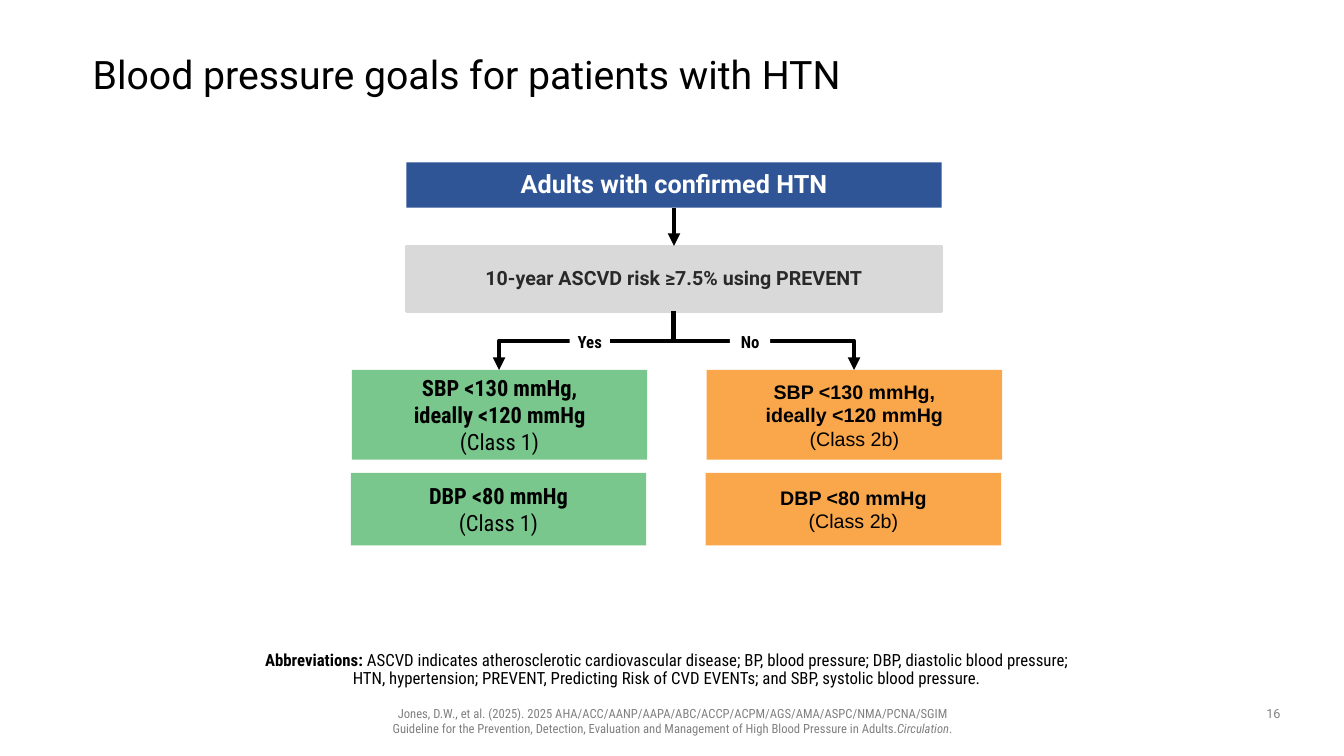
from dataclasses import dataclass

from lxml.etree import SubElement
from pptx import Presentation
from pptx.dml.color import RGBColor
from pptx.enum.shapes import MSO_CONNECTOR as Connector, MSO_SHAPE as Shape
from pptx.enum.text import MSO_ANCHOR as Anchor, PP_ALIGN as Align
from pptx.oxml.ns import qn
from pptx.util import Inches, Pt


@dataclass(frozen=True)
class Theme:
    black: str = "000000"
    white: str = "FFFFFF"
    blue: str = "2F5597"
    grey: str = "D9D9D9"
    charcoal: str = "292929"
    muted: str = "808080"
    green: str = "79C78D"
    orange: str = "FAA74B"
    sans: str = "Roboto"
    condensed: str = "Roboto Condensed"
    plain: str = "Arial"
    title: int = 28
    heading: int = 18
    goal: int = 16
    body: int = 14
    label: int = 12
    small: int = 9


class FlowSlide:
    """Holds the theme and the current slide, and draws its elements."""

    def __init__(self, presentation, theme):
        self.theme = theme
        self.slide = presentation.slides.add_slide(presentation.slide_layouts[6])

    def set_text(self, shape, paragraphs, font, size, color, bold=False, align=Align.CENTER,
                 anchor=Anchor.MIDDLE, spacing=None, insets=(0, 0, 0, 0)):
        """Each paragraph is a list of (text, font overrides); a newline is a line break."""
        frame = shape.text_frame
        left, top, right, bottom = map(Inches, insets)
        frame_format = {"word_wrap": True, "vertical_anchor": anchor, "margin_left": left,
                        "margin_top": top, "margin_right": right, "margin_bottom": bottom}
        for name, value in frame_format.items():
            setattr(frame, name, value)
        for index, runs in enumerate(paragraphs):
            paragraph = frame.add_paragraph() if index else frame.paragraphs[0]
            paragraph.alignment = align
            paragraph.line_spacing = spacing
            for text, overrides in runs:
                for number, line in enumerate(text.split("\n")):
                    if number:
                        paragraph.add_line_break()
                    run = paragraph.add_run()
                    run.text = line
                    font_format = {"name": font, "size": Pt(size), "bold": bold, **overrides}
                    for name, value in font_format.items():
                        setattr(run.font, name, value)
                    run.font.color.rgb = RGBColor.from_string(color)

    def text(self, bounds, paragraphs, **style):
        shape = self.slide.shapes.add_textbox(*map(Inches, bounds))
        self.set_text(shape, paragraphs, **style)

    def box(self, bounds, fill, paragraphs, outline=None, **style):
        shape = self.slide.shapes.add_shape(Shape.RECTANGLE, *map(Inches, bounds))
        shape.shadow.inherit = False
        shape.fill.solid()
        shape.fill.fore_color.rgb = RGBColor.from_string(fill)
        if outline:
            shape.line.color.rgb = RGBColor.from_string(outline)
            shape.line.width = Pt(2)
        else:
            shape.line.fill.background()
        self.set_text(shape, paragraphs, **style)
        return shape

    def arrow(self, kind, start, end):
        connector = self.slide.shapes.add_connector(kind, *map(Inches, (*start, *end)))
        connector.line.color.rgb = RGBColor.from_string(self.theme.black)
        connector.line.width = Pt(3)
        properties = connector._element.spPr
        SubElement(properties.find(qn("a:ln")), qn("a:tailEnd"), type="triangle")
        SubElement(properties, qn("a:effectLst"))
        return connector

    def branch(self, start, end):
        """Elbow arrow that leaves downwards: a sideways elbow turned a quarter."""
        middle_x, middle_y = (start[0] + end[0]) / 2, (start[1] + end[1]) / 2
        half_width, half_height = (end[1] - start[1]) / 2, abs(end[0] - start[0]) / 2
        goes_right = end[0] > start[0]
        reach = -half_width if goes_right else half_width
        connector = self.arrow(Connector.ELBOW, (middle_x - reach, middle_y - half_height),
                               (middle_x + reach, middle_y + half_height))
        turn = 270 if goes_right else 90
        connector._element.spPr.find(qn("a:xfrm")).set("rot", str(turn * 60000))


def main():
    presentation = Presentation()
    presentation.slide_width, presentation.slide_height = Inches(13.33), Inches(7.5)
    theme = Theme()
    page = FlowSlide(presentation, theme)
    default_insets = (0.1, 0.05, 0.1, 0.05)
    regular = {"bold": False}

    # Title
    page.text((0.92, 0.4, 11.5, 0.72), [[("Blood pressure goals for patients with HTN", {})]],
              font=theme.sans, size=theme.title, color=theme.black, align=Align.LEFT, spacing=0.9)

    # Population and risk question
    step = {"font": theme.sans, "bold": True, "spacing": 0.9}
    population = page.box((4.03, 1.61, 5.31, 0.45), theme.blue,
                          [[("Adults with confirmed HTN", {})]],
                          size=theme.heading, color=theme.white, **step)
    question = page.box((4.03, 2.44, 5.31, 0.65), theme.grey,
                        [[("10-year ASCVD risk ≥7.5% using PREVENT", {})]],
                        outline=theme.grey, size=theme.body, color=theme.charcoal, **step)

    # Blood pressure goals, one column per answer
    columns = [(3.48, theme.green, "Class 1", theme.condensed, theme.goal),
               (7.0, theme.orange, "Class 2b", theme.plain, theme.body)]
    goals = [(0.01, 3.67, 0.89, "SBP <130 mmHg,\nideally <120 mmHg"),
             (0, 4.69, 0.72, "DBP <80 mmHg")]
    for left, fill, grade, font, size in columns:
        for shift, top, height, goal in goals:
            page.box((left + shift, top, 2.93, height), fill,
                     [[(goal, {})], [(f"({grade})", regular)]],
                     font=font, size=size, color=theme.black, bold=True, insets=default_insets)

    # Arrows
    arrow = page.arrow(Connector.STRAIGHT, (6.68, 2.06), (6.68, 2.44))
    arrow.begin_connect(population, 2)
    arrow.end_connect(question, 0)
    for target in (4.95, 8.47):
        page.branch((6.68, 3.09), (target, 3.67))

    # Answers on the branches
    for left, answer in ((5.65, "Yes"), (7.24, "No")):
        page.box((left, 3.29, 0.4, 0.2), theme.white, [[(answer, {})]], font=theme.condensed,
                 size=theme.label, color=theme.black, bold=True, anchor=Anchor.TOP)

    # Abbreviations
    page.text((1.88, 6.42, 9.57, 0.46),
              [[("Abbreviations: ", {"bold": True}),
                ("ASCVD indicates atherosclerotic cardiovascular disease; BP, blood pressure; "
                 "DBP, diastolic blood pressure;\nHTN, hypertension; PREVENT, Predicting Risk of "
                 "CVD EVENTs; and SBP, systolic blood pressure.", {})]],
              font=theme.condensed, size=theme.label, color=theme.black, anchor=Anchor.BOTTOM,
              spacing=0.9, insets=(0, 0.05, 0.1, 0.05))

    # Citation and page number
    footer = {"size": theme.small, "color": theme.muted, "anchor": Anchor.TOP,
              "insets": default_insets}
    page.text((2.36, 6.95, 8.62, 0.4),
              [[("Jones, D.W., et al. (2025). 2025 AHA/ACC/AANP/AAPA/ABC/ACCP/ACPM/AGS/AMA/ASPC/"
                 "NMA/PCNA/SGIM\nGuideline for the Prevention, Detection, Evaluation and "
                 "Management of High Blood Pressure in Adults.", {}),
                ("Circulation", {"italic": True}), (".", {})]], font=theme.condensed, **footer)
    page.text((12.42, 6.95, 0.42, 0.26), [[("16", {})]], font=theme.sans, **footer)

    presentation.save("out.pptx")


if __name__ == "__main__":
    main()
